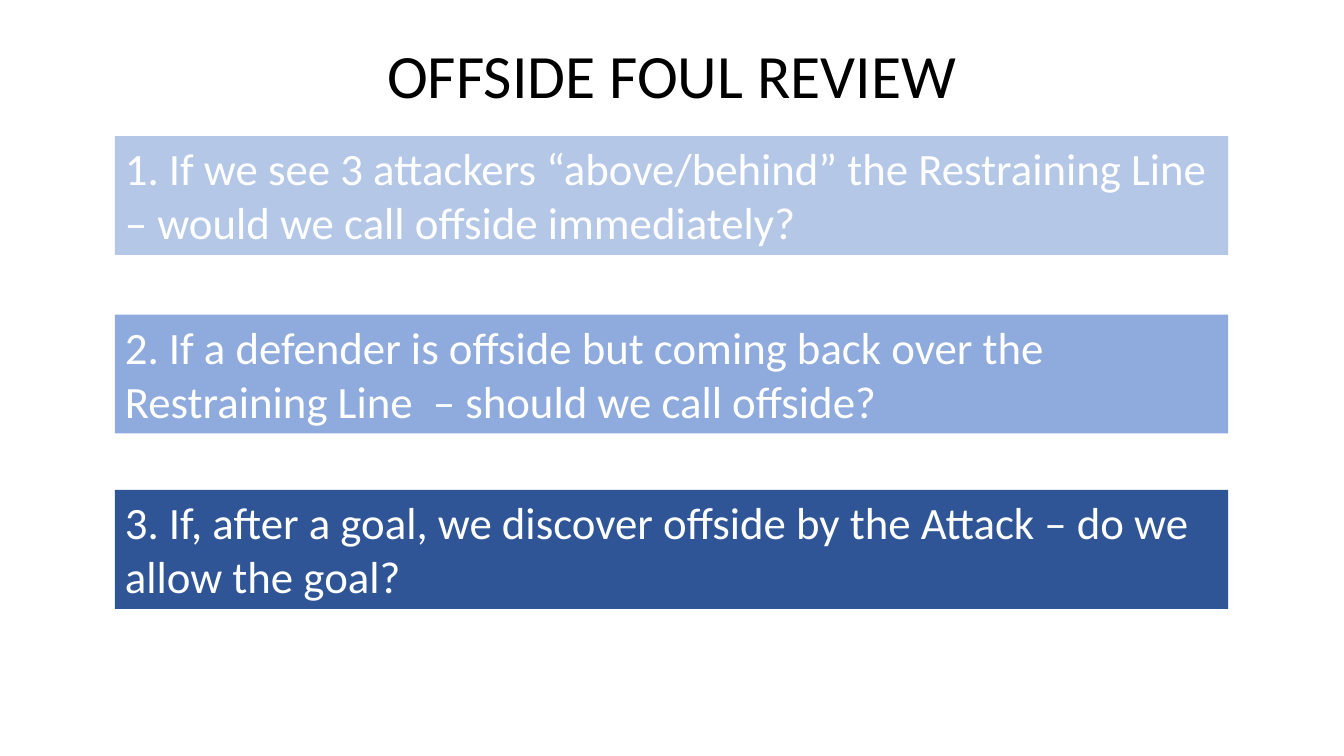
from dataclasses import dataclass

from pptx import Presentation
from pptx.dml.color import RGBColor
from pptx.enum.shapes import MSO_SHAPE
from pptx.enum.text import MSO_ANCHOR, PP_ALIGN
from pptx.util import Inches, Pt


@dataclass(frozen=True)
class Theme:
    font: str = "Calibri"
    title_size: int = 44
    question_size: int = 32
    title_color: str = "000000"
    question_color: str = "FFFFFF"


THEME = Theme()

# Top edge in inches, fill, wording
QUESTIONS = [
    (1.35, "B4C7E7", "1. If we see 3 attackers “above/behind” the Restraining Line "
                     "– would we call offside immediately?"),
    (3.12, "8FAADC", "2. If a defender is offside but coming back over the "
                     "Restraining Line  – should we call offside?"),
    (4.86, "2F5597", "3. If, after a goal, we discover offside by the Attack "
                     "– do we allow the goal?"),
]


def write_text(sp, text, *, size, color, align=PP_ALIGN.LEFT):
    tf = sp.text_frame
    tf.word_wrap = True
    tf.vertical_anchor = MSO_ANCHOR.TOP
    p = tf.paragraphs[0]
    p.alignment = align
    p.line_spacing = 1.0
    r = p.add_run()
    r.text = text
    r.font.name = THEME.font
    r.font.size = Pt(size)
    r.font.color.rgb = RGBColor.from_string(color)


def set_title(s, text):
    sp = s.shapes.title
    sp.left, sp.top = Inches(1.82), Inches(0.32)
    sp.width, sp.height = Inches(9.69), Inches(0.84)
    write_text(sp, text, size=THEME.title_size, color=THEME.title_color,
               align=PP_ALIGN.CENTER)


def add_question(s, top, fill, text):
    sp = s.shapes.add_shape(MSO_SHAPE.RECTANGLE, Inches(1.14), Inches(top),
                            Inches(11.04), Inches(1.18))
    sp.shadow.inherit = False
    sp.fill.solid()
    sp.fill.fore_color.rgb = RGBColor.from_string(fill)
    sp.line.fill.background()
    write_text(sp, text, size=THEME.question_size, color=THEME.question_color)


def main():
    prs = Presentation()
    prs.slide_width, prs.slide_height = Inches(13.33), Inches(7.5)
    s = prs.slides.add_slide(prs.slide_layouts[5])
    set_title(s, "OFFSIDE FOUL REVIEW")
    for top, fill, text in QUESTIONS:
        add_question(s, top, fill, text)
    prs.save("out.pptx")


if __name__ == "__main__":
    main()
